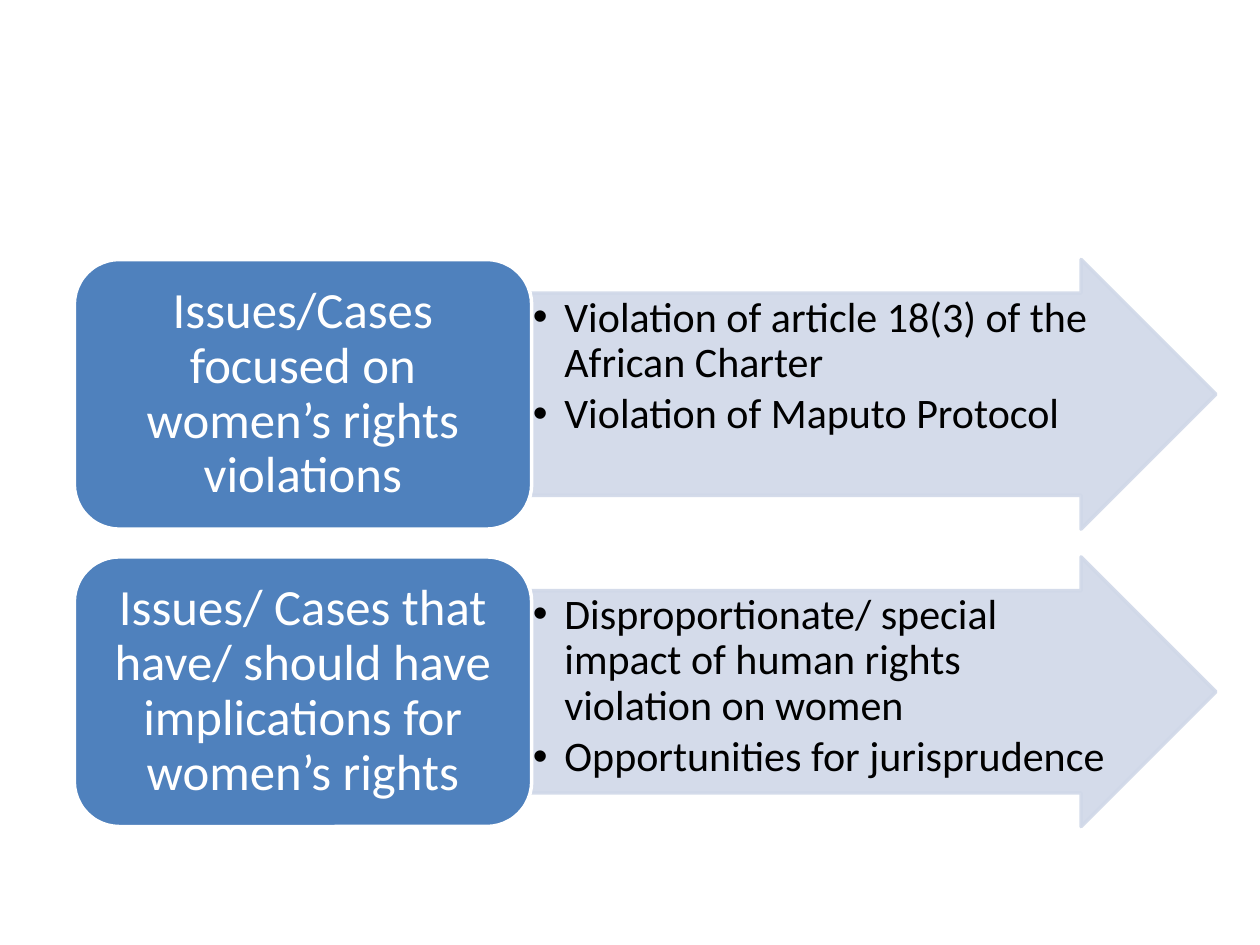
from dataclasses import dataclass

from lxml import etree
from pptx import Presentation
from pptx.dml.color import RGBColor
from pptx.enum.shapes import MSO_SHAPE
from pptx.enum.text import MSO_ANCHOR, PP_ALIGN
from pptx.oxml.ns import qn
from pptx.util import Inches, Pt

ARROW, ROUNDED = MSO_SHAPE.RIGHT_ARROW, MSO_SHAPE.ROUNDED_RECTANGLE
TOP, MIDDLE = MSO_ANCHOR.TOP, MSO_ANCHOR.MIDDLE
LEFT, CENTER = PP_ALIGN.LEFT, PP_ALIGN.CENTER


@dataclass(frozen=True)
class Theme:
    font: str = "Calibri"
    topic_size: float = 29
    detail_size: float = 24
    topic_fill: str = "4F81BD"
    topic_text: str = "FFFFFF"
    topic_line: str = "FFFFFF"
    arrow_fill: str = "D0D8E8"
    arrow_opacity: int = 90
    detail_text: str = "000000"
    line_width: float = 2
    line_spacing: float = 0.9


class SlideBuilder:
    def __init__(self, slide, theme):
        self.slide = slide
        self.theme = theme

    def shape(self, kind, place, fill, line):
        shape = self.slide.shapes.add_shape(kind, *map(Inches, place))
        shape.shadow.inherit = False
        shape.fill.solid()
        shape.fill.fore_color.rgb = RGBColor.from_string(fill)
        shape.line.color.rgb = RGBColor.from_string(line)
        shape.line.width = Pt(self.theme.line_width)
        return shape

    def fill_text(self, shape, paragraphs, size, color, frame_format, para_format):
        frame = shape.text_frame
        frame.word_wrap = True
        for name, value in frame_format.items():
            setattr(frame, name, value)
        frame.text = "\n".join(paragraphs)
        for para in frame.paragraphs:
            para.line_spacing = self.theme.line_spacing
            for name, value in para_format.items():
                setattr(para, name, value)
            font = para.runs[0].font
            font.name, font.size = self.theme.font, Pt(size)
            font.color.rgb = RGBColor.from_string(color)
        return frame.paragraphs

    def topic(self, place, text):
        theme = self.theme
        box = self.shape(ROUNDED, place, theme.topic_fill, theme.topic_line)
        side, edge = Inches(0.12), Inches(0.06)
        self.fill_text(
            box, [text], theme.topic_size, theme.topic_text,
            dict(margin_left=side, margin_right=side, margin_top=edge,
                 margin_bottom=edge, vertical_anchor=MIDDLE),
            dict(alignment=CENTER, space_after=Pt(0.35 * theme.topic_size)))

    def detail_arrow(self, place, points):
        theme = self.theme
        arrow = self.shape(ARROW, place, theme.arrow_fill, theme.arrow_fill)
        arrow.adjustments[0], arrow.adjustments[1] = 0.75, 0.5
        for color in arrow.element.spPr.iter(qn("a:srgbClr")):
            etree.SubElement(color, qn("a:alpha"), val=str(theme.arrow_opacity * 1000))
        inset = Inches(0.02)
        paragraphs = self.fill_text(
            arrow, points, theme.detail_size, theme.detail_text,
            dict(margin_left=inset, margin_right=inset, margin_top=inset,
                 margin_bottom=inset, vertical_anchor=TOP),
            dict(alignment=LEFT, level=1, space_after=Pt(0.15 * theme.detail_size)))
        for para in paragraphs:
            self.bullet(para)

    def bullet(self, para):
        properties = para._p.get_or_add_pPr()
        properties.set("marL", str(Inches(0.25)))
        properties.set("indent", str(Inches(-0.25)))
        etree.SubElement(properties, qn("a:buFont"), typeface="Arial")
        etree.SubElement(properties, qn("a:buChar"), char="•")


ROWS = [
    ("Issues/Cases focused on women’s rights violations",
     ["Violation of article 18(3) of the African Charter",
      "Violation of Maputo Protocol"]),
    ("Issues/ Cases that have/ should have implications for women’s rights",
     ["Disproportionate/ special impact of human rights violation on women",
      "Opportunities for jurisprudence"]),
]
FIRST_TOP, ROW_HEIGHT, ROW_PITCH = 2.06, 2.14, 2.36
TOPIC_LEFT, TOPIC_WIDTH = 0.59, 3.63
ARROW_LEFT, ARROW_WIDTH = 4.21, 5.44


def main():
    deck = Presentation()
    deck.slide_width, deck.slide_height = Inches(10), Inches(7.5)
    page = SlideBuilder(deck.slides.add_slide(deck.slide_layouts[6]), Theme())
    for index, (topic, points) in enumerate(ROWS):
        top = FIRST_TOP + index * ROW_PITCH
        page.detail_arrow((ARROW_LEFT, top, ARROW_WIDTH, ROW_HEIGHT), points)
        page.topic((TOPIC_LEFT, top, TOPIC_WIDTH, ROW_HEIGHT), topic)
    deck.save("out.pptx")


if __name__ == "__main__":
    main()
